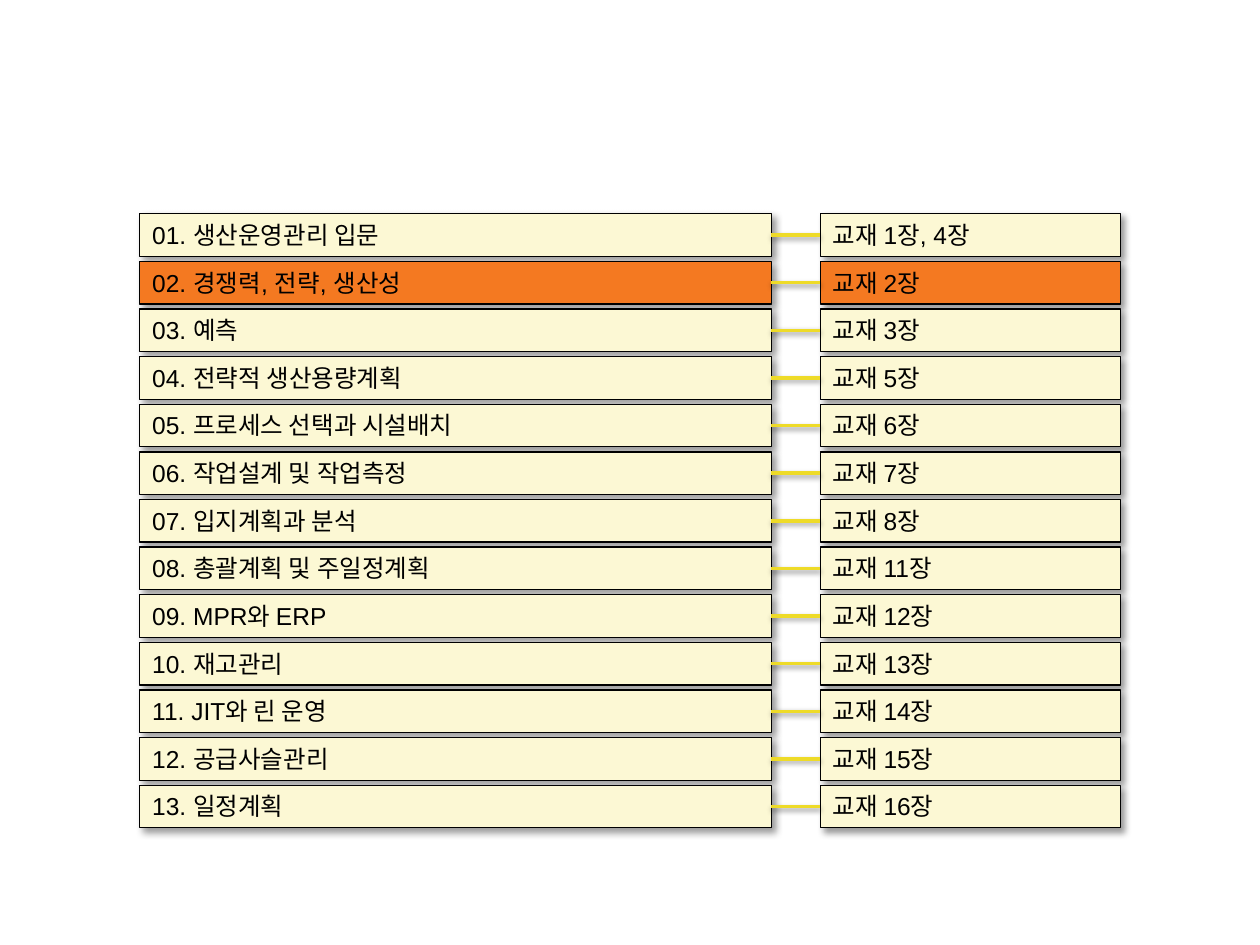
from lxml.etree import SubElement
from pptx import Presentation
from pptx.dml.color import RGBColor
from pptx.enum.shapes import MSO_CONNECTOR, MSO_SHAPE
from pptx.enum.text import MSO_ANCHOR, MSO_AUTO_SIZE, PP_ALIGN
from pptx.oxml.ns import qn
from pptx.util import Cm, Pt

COLORS = {
    "cream": "FCF8D4",
    "orange": "F47921",
    "yellow": "EEDB28",
    "black": "000000",
}
CHAPTERS = [
    ("01. 생산운영관리 입문", "교재 1장, 4장"),
    ("02. 경쟁력, 전략, 생산성", "교재 2장"),
    ("03. 예측", "교재 3장"),
    ("04. 전략적 생산용량계획", "교재 5장"),
    ("05. 프로세스 선택과 시설배치", "교재 6장"),
    ("06. 작업설계 및 작업측정", "교재 7장"),
    ("07. 입지계획과 분석", "교재 8장"),
    ("08. 총괄계획 및 주일정계획", "교재 11장"),
    ("09. MPR와 ERP", "교재 12장"),
    ("10. 재고관리", "교재 13장"),
    ("11. JIT와 린 운영", "교재 14장"),
    ("12. 공급사슬관리", "교재 15장"),
    ("13. 일정계획", "교재 16장"),
]
CURRENT = 1
TOP, PITCH, HEIGHT = 4.31, 0.96, 0.86
TOPIC_LEFT, TOPIC_WIDTH = 2.82, 12.73
BOOK_LEFT, BOOK_WIDTH = 16.54, 6.05


def rgb(name):
    return RGBColor.from_string(COLORS[name])


def add_shadow(item, blur, distance, angle, opacity):
    effects = SubElement(item._element.spPr, qn("a:effectLst"))
    shadow = SubElement(effects, qn("a:outerShdw"), blurRad=str(Pt(blur)),
                        dist=str(Pt(distance)), dir=str(angle * 60000),
                        algn="tl", rotWithShape="0")
    color = SubElement(shadow, qn("a:srgbClr"), val=COLORS["black"])
    SubElement(color, qn("a:alpha"), val=str(opacity * 1000))


prs = Presentation()
prs.slide_width, prs.slide_height = Cm(25.4), Cm(19.05)
shapes = prs.slides.add_slide(prs.slide_layouts[6]).shapes

columns = [(TOPIC_LEFT, TOPIC_WIDTH), (BOOK_LEFT, BOOK_WIDTH)]
for column, (left, width) in enumerate(columns):
    for row, chapter in enumerate(CHAPTERS):
        box = shapes.add_shape(MSO_SHAPE.RECTANGLE, Cm(left), Cm(TOP + row * PITCH),
                               Cm(width), Cm(HEIGHT))
        box.fill.solid()
        box.fill.fore_color.rgb = rgb("orange" if row == CURRENT else "cream")
        box.line.color.rgb = rgb("black")
        box.line.width = Pt(0.75)
        add_shadow(box, 4, 3, 45, 40)

        frame = box.text_frame
        frame.word_wrap = True
        frame.auto_size = MSO_AUTO_SIZE.SHAPE_TO_FIT_TEXT
        frame.vertical_anchor = MSO_ANCHOR.TOP
        label = frame.paragraphs[0]
        label.text = chapter[column]
        label.alignment = PP_ALIGN.LEFT
        label.font.name = "Arial"
        label.font.size = Pt(14)
        label.font.color.rgb = rgb("black")

for row in range(len(CHAPTERS)):
    middle = Cm(TOP + row * PITCH + HEIGHT / 2)
    link = shapes.add_connector(MSO_CONNECTOR.STRAIGHT, Cm(TOPIC_LEFT + TOPIC_WIDTH),
                                middle, Cm(BOOK_LEFT), middle)
    link.line.color.rgb = rgb("yellow")
    link.line.width = Pt(2)
    add_shadow(link, 3.1, 1.6, 90, 38)

prs.save("out.pptx")
